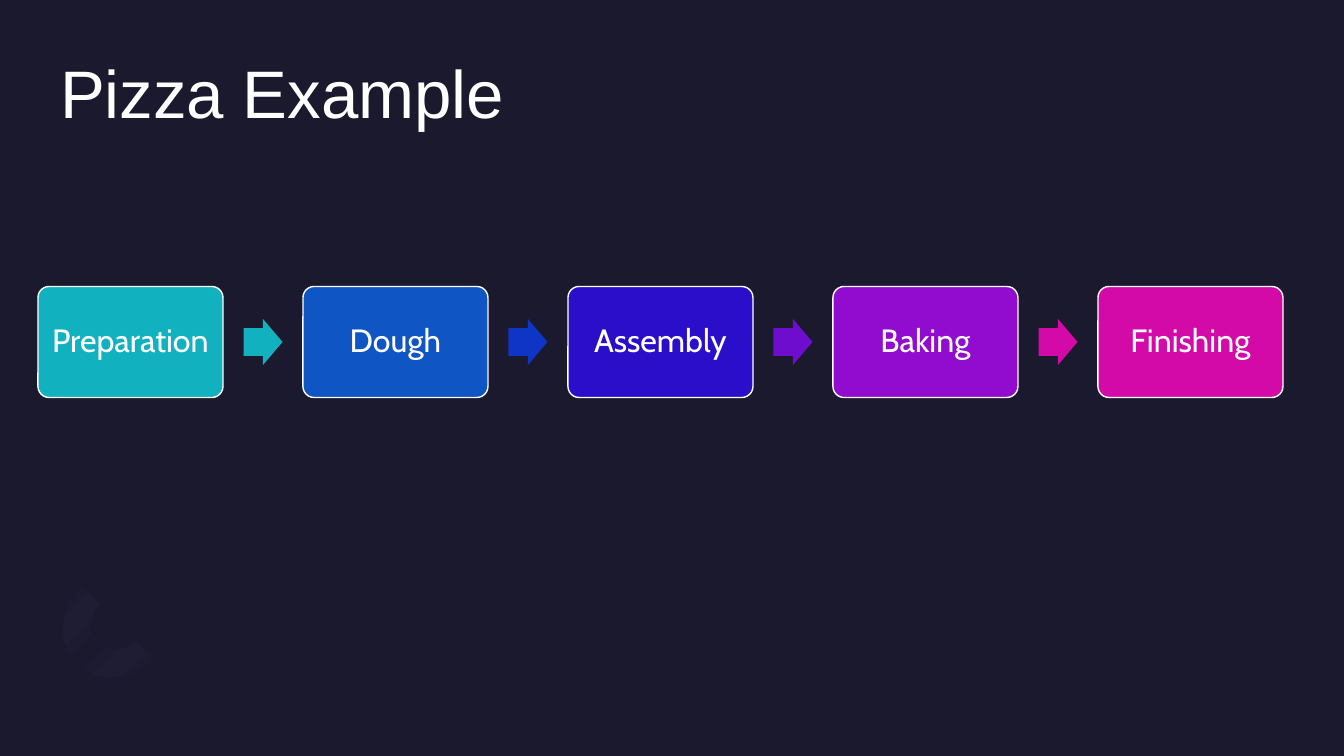
from lxml import etree
from pptx import Presentation
from pptx.dml.color import RGBColor
from pptx.enum.shapes import MSO_SHAPE
from pptx.enum.text import MSO_ANCHOR, PP_ALIGN
from pptx.oxml.ns import qn
from pptx.util import Inches, Pt

ROUNDED, ARROW, OVAL = MSO_SHAPE.ROUNDED_RECTANGLE, MSO_SHAPE.RIGHT_ARROW, MSO_SHAPE.OVAL
LEFT, CENTER = PP_ALIGN.LEFT, PP_ALIGN.CENTER
TOP, MIDDLE = MSO_ANCHOR.TOP, MSO_ANCHOR.MIDDLE

NAVY = RGBColor(0x1B, 0x19, 0x2E)
WHITE = RGBColor(0xFF, 0xFF, 0xFF)
DUSK = RGBColor(0x2C, 0x28, 0x4A)
GLOW = RGBColor(0x1F, 0x1D, 0x33)
TEAL = RGBColor(0x12, 0xB1, 0xBF)
BLUE = RGBColor(0x10, 0x55, 0xC4)
ROYAL = RGBColor(0x0F, 0x35, 0xC6)
INDIGO = RGBColor(0x2A, 0x0E, 0xC9)
VIOLET = RGBColor(0x6E, 0x0D, 0xCD)
PURPLE = RGBColor(0x91, 0x0C, 0xCF)
PINK = RGBColor(0xD4, 0x0A, 0xA8)

TITLE = "Pizza Example"
# Step, box colour, colour of the arrow that follows
STEPS = [
    ("Preparation", TEAL, TEAL),
    ("Dough", BLUE, ROYAL),
    ("Assembly", INDIGO, VIOLET),
    ("Baking", PURPLE, PINK),
    ("Finishing", PINK, None),
]
FIRST_LEFT, STEP_PITCH, FLOW_MIDDLE = 38, 265, 342
BOX_WIDTH, BOX_HEIGHT = 185, 111
ARROW_WIDTH, ARROW_HEIGHT = 39, 46

# Decorative ring: each curve runs from the last point to its third point
RING_START = (77, 664)
RING_OUTER = [[(56, 644), (58, 610), (82, 587)]]
RING_INNER = [[(88, 616), (87, 634), (97, 643)], [(107, 653), (124, 652), (136, 641)]]
RING_CLOSE = [[(131, 681), (96, 684), RING_START]]
RING_INNER_START, RING_OUTER_END = (100, 605), (153, 659)
RING_CAPS = [(139, 655), (86, 601)]
CAP_WIDTH, CAP_HEIGHT = 6, 26
GLOW_STOPS = [(0, NAVY), (26, GLOW), (50, NAVY), (73, GLOW), (100, NAVY)]

EMU_PER_PX = Inches(1) / 100.8


def px(length):
    return round(length * EMU_PER_PX)


def write(shape, text, *, font, size, align=LEFT, anchor=TOP, inset=0):
    frame = shape.text_frame
    frame.word_wrap = True
    frame.vertical_anchor = anchor
    frame.margin_left = frame.margin_right = px(inset)
    frame.margin_top = frame.margin_bottom = px(inset)
    paragraph = frame.paragraphs[0]
    paragraph.alignment = align
    paragraph.line_spacing = 0.9
    run = paragraph.add_run()
    run.text = text
    run.font.name, run.font.size = font, Pt(size)
    run.font.color.rgb = WHITE


def add_block(slide, preset, center, size, color, adjustments=()):
    (x, y), (width, height) = center, size
    block = slide.shapes.add_shape(
        preset, px(x - width / 2), px(y - height / 2), px(width), px(height))
    block.shadow.inherit = False
    block.fill.solid()
    block.fill.fore_color.rgb = color
    block.line.fill.background()
    for index, value in enumerate(adjustments):
        block.adjustments[index] = value
    return block


def trace(start, curves, steps=12):
    """Return points along a chain of cubic curves."""
    points = [start]
    for a, b, end in curves:
        for step in range(1, steps + 1):
            t = step / steps
            weights = ((1 - t) ** 3, 3 * t * (1 - t) ** 2, 3 * t * t * (1 - t), t ** 3)
            points.append(tuple(sum(w * p[axis] for w, p in zip(weights, (start, a, b, end)))
                                for axis in (0, 1)))
        start = end
    return points


def add_ring(slide):
    points = (trace(RING_START, RING_OUTER) + trace(RING_INNER_START, RING_INNER)
              + trace(RING_OUTER_END, RING_CLOSE))
    builder = slide.shapes.build_freeform(*points[0], scale=EMU_PER_PX)
    builder.add_line_segments(points[1:], close=True)
    ring = builder.convert_to_shape()
    ring.shadow.inherit = False
    ring.line.fill.background()
    ring.fill.gradient()
    ring.fill.gradient_angle = 315
    stop_list = ring._element.spPr.find(qn("a:gradFill")).find(qn("a:gsLst"))
    for stop in list(stop_list):
        stop_list.remove(stop)
    for percent, color in GLOW_STOPS:
        stop = etree.SubElement(stop_list, qn("a:gs"), pos=str(percent * 1000))
        etree.SubElement(stop, qn("a:srgbClr"), val=str(color))


def main():
    deck = Presentation()
    deck.slide_width, deck.slide_height = px(1344), px(756)
    slide = deck.slides.add_slide(deck.slide_layouts[5])
    slide.background.fill.solid()
    slide.background.fill.fore_color.rgb = NAVY

    for center in RING_CAPS:
        add_block(slide, OVAL, center, (CAP_WIDTH, CAP_HEIGHT), DUSK).rotation = 135
    add_ring(slide)

    title = slide.shapes.title
    title.left, title.top, title.width, title.height = map(px, (60, 60, 1223, 147))
    write(title, TITLE, font="Arial", size=48)

    for index, (step, box_color, arrow_color) in enumerate(STEPS):
        box_center = FIRST_LEFT + index * STEP_PITCH + BOX_WIDTH / 2
        box = add_block(slide, ROUNDED, (box_center, FLOW_MIDDLE),
                        (BOX_WIDTH, BOX_HEIGHT), box_color, [0.1])
        box.line.color.rgb, box.line.width = WHITE, Pt(1)
        write(box, step, font="Cabin", size=23, align=CENTER, anchor=MIDDLE, inset=10)
        if arrow_color is not None:
            add_block(slide, ARROW, (box_center + STEP_PITCH / 2, FLOW_MIDDLE),
                      (ARROW_WIDTH, ARROW_HEIGHT), arrow_color, [0.6, 0.5])

    deck.save("out.pptx")


if __name__ == "__main__":
    main()
